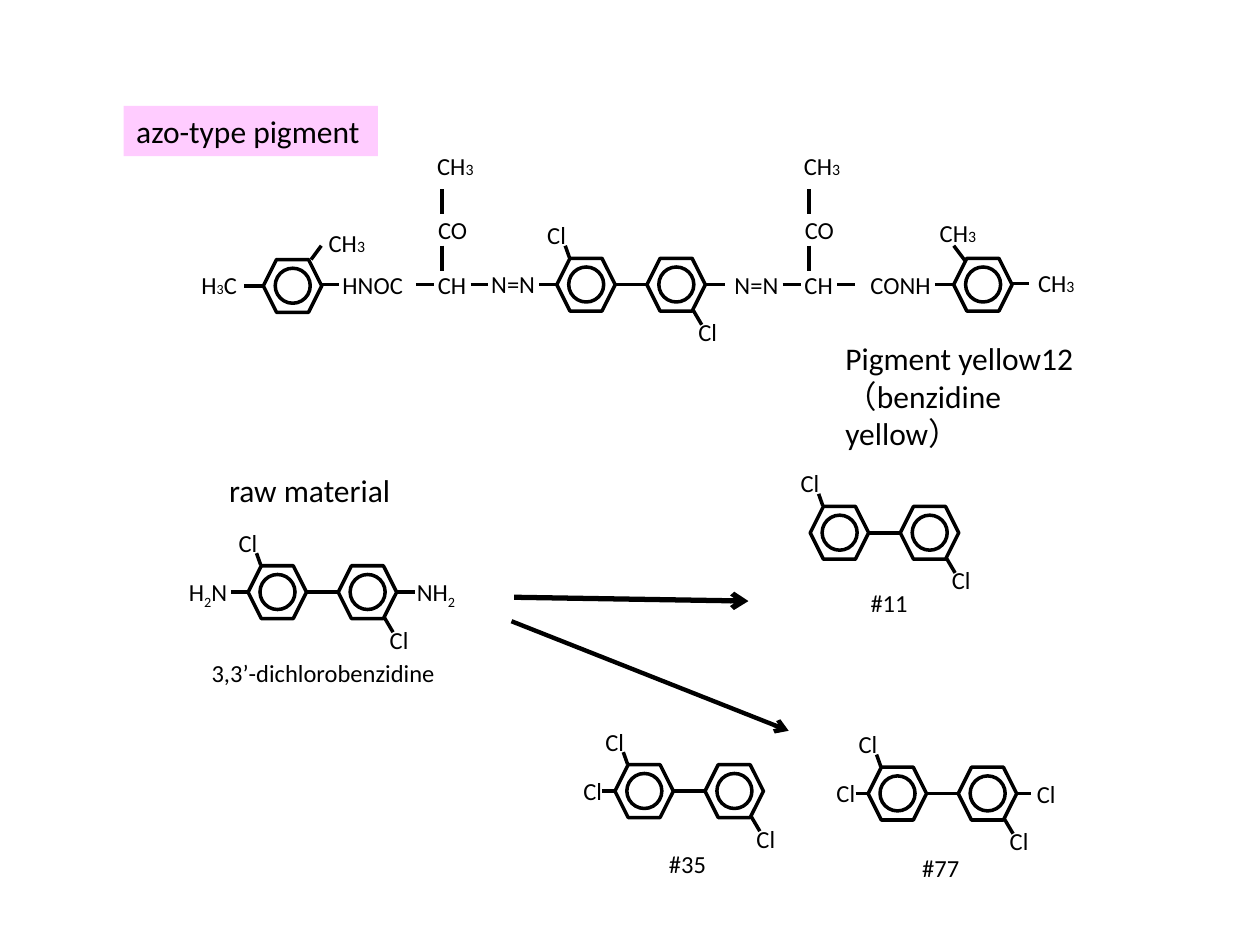
from lxml.etree import SubElement
from pptx import Presentation
from pptx.dml.color import RGBColor
from pptx.enum.shapes import MSO_CONNECTOR, MSO_SHAPE
from pptx.enum.text import MSO_ANCHOR, MSO_AUTO_SIZE, PP_ALIGN
from pptx.oxml.ns import qn
from pptx.util import Pt

COLORS = {"ink": "000000", "heading": "FFCCFF"}
FONT = "Calibri"
LABEL_HEIGHT = 24.5
RING_WIDTH, RING_HEIGHT = 33.4, 30.2
RING_PITCH = 51.5
BOND_Y = RING_HEIGHT / 2


def color(name):
    return RGBColor.from_string(COLORS[name])


def write_text(shape, text, size=14, wrap=False, small_size=None, baseline=None):
    """Write one paragraph per line; parts between bars are subscripts."""
    frame = shape.text_frame
    frame.word_wrap = wrap
    frame.auto_size = MSO_AUTO_SIZE.NONE
    frame.vertical_anchor = MSO_ANCHOR.TOP
    for index, line in enumerate(text.split("\n")):
        paragraph = frame.add_paragraph() if index else frame.paragraphs[0]
        paragraph.alignment = PP_ALIGN.LEFT
        for part_index, part in enumerate(line.split("|")):
            if not part:
                continue
            subscript = part_index % 2 == 1
            run = paragraph.add_run()
            run.text = part
            run.font.name = FONT
            run.font.size = Pt(small_size if subscript and small_size else size)
            run.font.color.rgb = color("ink")
            if subscript and baseline:
                run.font._element.set("baseline", str(baseline))


def add_label(shapes, text, left, top, width, height=LABEL_HEIGHT, **text_format):
    box = shapes.add_textbox(Pt(left), Pt(top), Pt(width), Pt(height))
    write_text(box, text, **text_format)


def add_line(shapes, start, end, width=2, arrow=False):
    points = [Pt(value) for value in (*start, *end)]
    line = shapes.add_connector(MSO_CONNECTOR.STRAIGHT, *points)
    line.line.color.rgb = color("ink")
    line.line.width = Pt(width)
    properties = line._element.spPr
    if arrow:
        SubElement(properties.find(qn("a:ln")), qn("a:tailEnd"), type="arrow")
    SubElement(properties, qn("a:effectLst"))


def add_bonds(shapes, left, top, bonds):
    for x1, y1, x2, y2 in bonds:
        add_line(shapes, (left + x1, top + y1), (left + x2, top + y2))


def add_labels(shapes, left, top, labels, **text_format):
    for text, x, y, width in labels:
        add_label(shapes, text, left + x, top + y, width, **text_format)


def add_ring(shapes, left, top):
    """Draw a benzene ring: a hexagon with a circle inside."""
    for kind, x, y, width, height in (
        (MSO_SHAPE.HEXAGON, 0, 0, RING_WIDTH, RING_HEIGHT),
        (MSO_SHAPE.OVAL, 6.8, 5, 20, 20),
    ):
        shape = shapes.add_shape(kind, Pt(left + x), Pt(top + y), Pt(width), Pt(height))
        shape.shadow.inherit = False
        shape.fill.background()
        shape.line.color.rgb = color("ink")
        shape.line.width = Pt(2)


def add_biphenyl(parent, left, top, side_bonds=(), side_labels=(), name=None):
    """Draw two joined rings with a chlorine on each, and the given side groups."""
    shapes = parent.add_group_shape().shapes
    add_ring(shapes, left, top)
    add_ring(shapes, left + RING_PITCH, top)
    add_bonds(shapes, left, top, [
        (33.4, BOND_Y, 52, BOND_Y),
        (4.8, -7.2, 7.2, -0.4),
        (82.8, 38, 77.8, 29.5),
        *[(start, BOND_Y, end, BOND_Y) for start, end in side_bonds],
    ])
    add_labels(shapes, left, top, [("Cl", -12.6, -25.2, 25.2), ("Cl", 73.8, 30.2, 25.2)])
    add_labels(shapes, left, top, side_labels, baseline=-25000)
    if name:
        add_labels(shapes, left, top, [name])


def add_acetyl_arm(shapes, left, top):
    """Draw the CH3-CO-CH column with the bonds beside its foot."""
    add_bonds(shapes, left, top, [
        (0, 25.2, 0, 39.6), (0, 57.6, 0, 72),
        (-15, 79.9, -4.5, 79.9), (16.2, 79.9, 26.3, 79.9),
    ])
    add_labels(shapes, left, top, [
        ("CH|3|", -10, 0, 36.7), ("CO", -9.4, 36.7, 31.7), ("CH", -9.6, 67.7, 31),
    ], small_size=9)


def add_pigment(shapes, left, top):
    add_ring(shapes, left + 42.5, top + 65.5)
    add_ring(shapes, left + 437, top + 64.8)
    for arm_x in (144.7, 354.2):
        add_acetyl_arm(shapes, left + arm_x, top)
    add_biphenyl(shapes, left + 210.2, top + 64.8, [(0, -10), (85.5, 96)])
    add_bonds(shapes, left, top, [
        (31.7, 80.6, 42.5, 80.6), (75.6, 57.6, 69.8, 65.5), (75.6, 79.9, 85.7, 79.9),
        (426.2, 79.9, 437, 79.9), (437, 57.6, 443.5, 66.2), (470.2, 79.2, 480.2, 79.2),
    ])
    add_labels(shapes, left, top, [("H|3|C", 0, 67.7, 35.3)], small_size=8)
    add_labels(shapes, left, top, [
        ("CH|3|", 72.7, 43.9, 36.7), ("HNOC", 80.6, 67.7, 49.7),
        ("N=N", 165.6, 67.3, 39.6), ("N=N", 304.6, 67.7, 39.6),
        ("CONH", 382.3, 67.7, 49),
        ("CH|3|", 421.9, 38.2, 36.7), ("CH|3|", 478.1, 67, 36.7),
    ], small_size=9)
    add_label(shapes, "Pigment yellow12\n（benzidine yellow）", left + 368, top + 107.3,
              163.4, 51, size=18, wrap=True)


def add_raw_material(shapes, left, top):
    add_label(shapes, "raw material", left + 23, top, 114.5, 28.8, size=18, wrap=True)
    add_biphenyl(shapes, left + 41, top + 57.6, [(0, -10), (85, 95.5)],
                 [("H|2|N", -41, 3, 37.4), ("NH|2|", 89.3, 3, 37.4)])
    add_label(shapes, "3,3’-dichlorobenzidine", left + 13, top + 106.6, 143.3)


def add_products(shapes, left, top):
    """Draw the three chlorinated biphenyls, numbered below."""
    left_bond, left_chlorine = (-7.2, 1.2), ("Cl", -25.2, 2.9, 25.2)
    right_bond, right_chlorine = (85, 93), ("Cl", 89.3, 3.4, 25.2)
    products = [
        ("#11", 111.6, 0, 27.4, 43.2, [], []),
        ("#35", 0, 147.6, 23.8, 44.6, [left_bond], [left_chlorine]),
        ("#77", 144.7, 149, 23.8, 45.4, [left_bond, right_bond],
         [left_chlorine, right_chlorine]),
    ]
    for number, x, y, name_x, name_y, bonds, labels in products:
        add_biphenyl(shapes, left + x, top + y, bonds, labels, (number, name_x, name_y, 36))


def add_arrows(shapes, left, top):
    add_line(shapes, (left + 1.5, top), (left + 135.4, top + 2.2), width=3, arrow=True)
    add_line(shapes, (left, top + 13.7), (left + 158.4, top + 76.3), width=2.5, arrow=True)


def add_heading(slide, left, top, width, height):
    title = slide.shapes.title
    title.left, title.top, title.width, title.height = map(Pt, (left, top, width, height))
    title.fill.solid()
    title.fill.fore_color.rgb = color("heading")
    write_text(title, "azo-type pigment", size=18)


def main():
    presentation = Presentation()
    presentation.slide_width, presentation.slide_height = Pt(720), Pt(540)
    slide = presentation.slides.add_slide(presentation.slide_layouts[5])
    add_heading(slide, 70.6, 60.5, 145.4, 28.8)
    add_pigment(slide.shapes, 108, 82.8)
    add_raw_material(slide.shapes, 100.8, 265.7)
    add_arrows(slide.shapes, 292.3, 341.3)
    add_products(slide.shapes, 351.4, 289.4)
    presentation.save("out.pptx")


if __name__ == "__main__":
    main()
